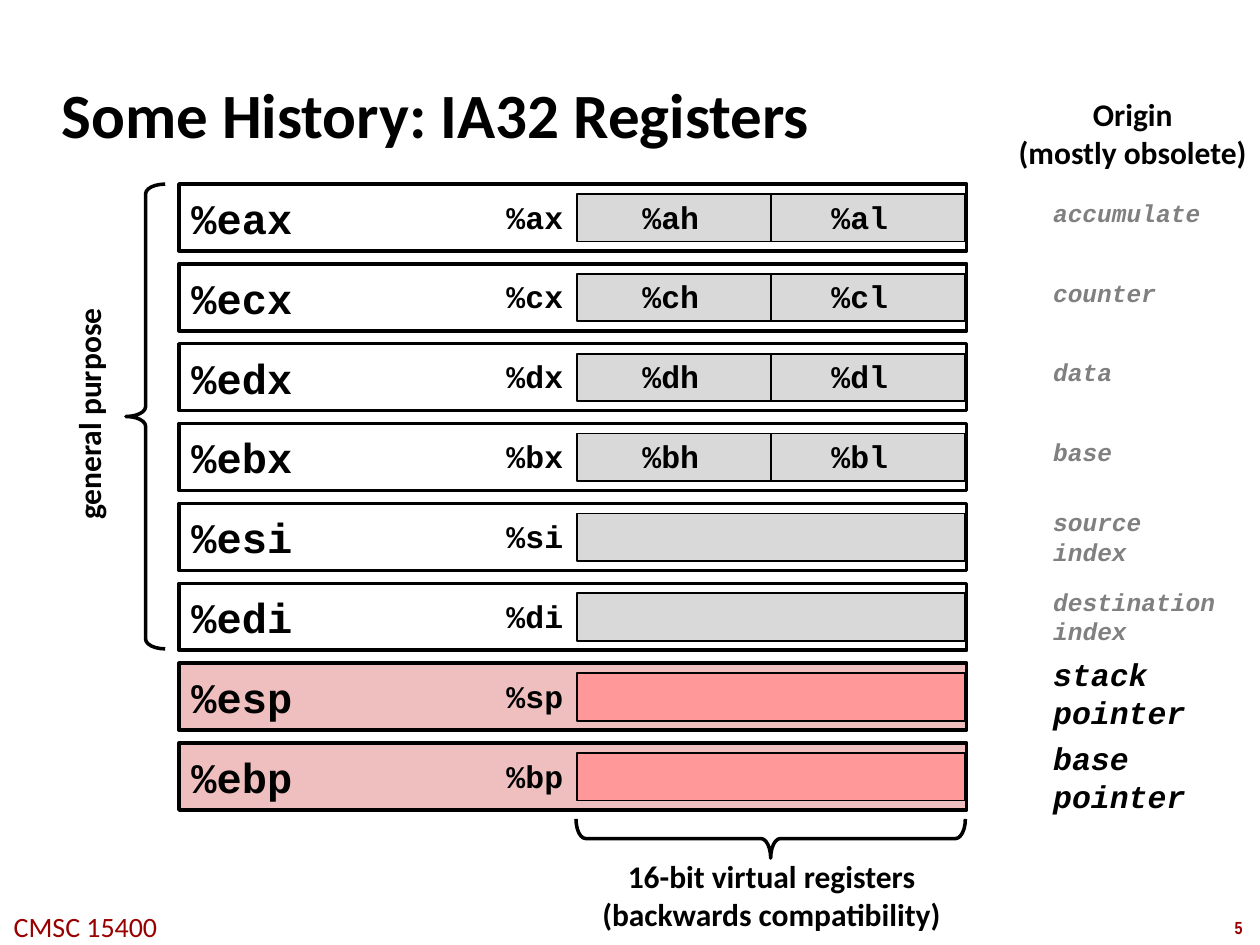
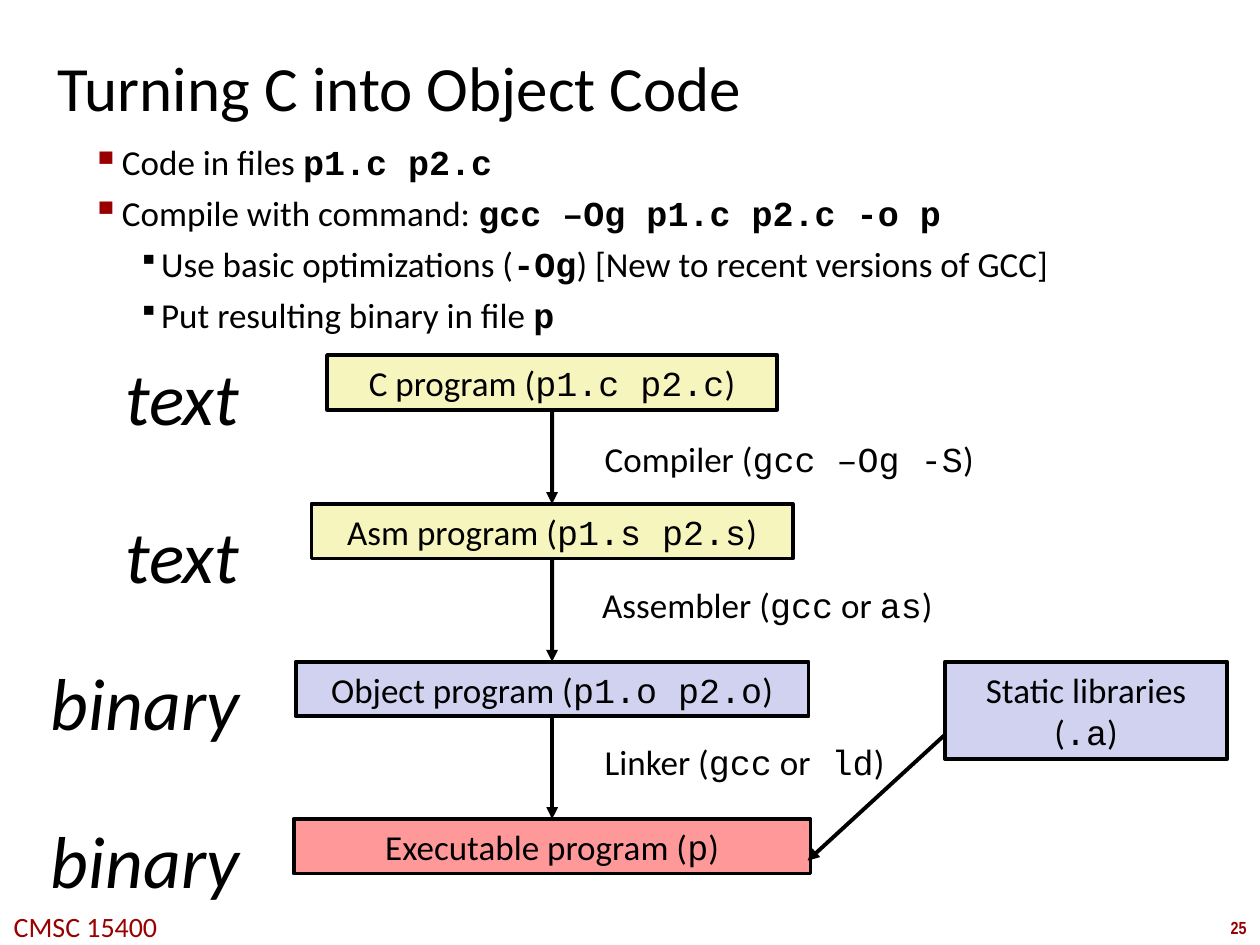
from dataclasses import dataclass, replace
from typing import NamedTuple

from lxml.etree import SubElement
from pptx import Presentation
from pptx.dml.color import RGBColor
from pptx.enum.shapes import MSO_CONNECTOR, MSO_SHAPE
from pptx.enum.text import MSO_ANCHOR, PP_ALIGN
from pptx.oxml.ns import qn
from pptx.util import Cm, Pt

COLORS = {
    "black": "000000", "white": "FFFFFF", "maroon": "990000", "gray": "808080",
    "light gray": "D9D9D9", "pink": "EFBFBF", "red": "FF9999",
    "yellow": "F6F5BD", "lavender": "D1D1F0",
}
MONO = "Courier New"
BOTTOM, TOP = 2, 0


@dataclass(frozen=True)
class TextStyle:
    size: float
    font: str = "Calibri"
    bold: bool = False
    italic: bool = False
    color: str = "black"
    bold_code: bool = False
    align: PP_ALIGN = PP_ALIGN.LEFT


class Box(NamedTuple):
    left: float
    top: float
    width: float
    height: float


class Register(NamedTuple):
    letters: str
    origin: str
    rise: float  # height of the origin label's top above the bar
    split: bool = False
    special: bool = False


class Stage(NamedTuple):
    kind: str
    kind_top: float
    label: str
    top: float
    width: float
    fill: str


class Bullet(NamedTuple):
    text: str
    level: int


class BulletStyle(NamedTuple):
    indent: float
    hanging: float
    color: str
    percent: int


TITLE = TextStyle(36)
LABEL = TextStyle(18, bold=True)
CENTERED_LABEL = replace(LABEL, align=PP_ALIGN.CENTER)
FLOW = TextStyle(20)
FLOW_BOX = replace(FLOW, align=PP_ALIGN.CENTER)
KIND = TextStyle(42, italic=True, align=PP_ALIGN.RIGHT)
REGISTER = TextStyle(24, MONO, bold=True)
PART = TextStyle(18, MONO, bold=True)
OBSOLETE = TextStyle(14, MONO, bold=True, italic=True, color="gray")
CURRENT = replace(PART, italic=True)
FOOTER = TextStyle(16, color="maroon", align=PP_ALIGN.CENTER)
PAGE = TextStyle(10, "Arial Narrow", bold=True, color="maroon", align=PP_ALIGN.CENTER)

# Registers: one row per register, equally spaced
REGISTERS = [
    Register("ax", "accumulate", 0.05, split=True),
    Register("cx", "counter", 0.05, split=True),
    Register("dx", "data", 0.05, split=True),
    Register("bx", "base", 0.05, split=True),
    Register("si", "source\nindex", 0.25),
    Register("di", "destination\nindex", 0.25),
    Register("sp", "stack\npointer", 0.48, special=True),
    Register("bp", "base\npointer", 0.4, special=True),
]
FIRST_ROW = Box(3.61, 3.71, 15.88, 1.35)
FIRST_BAR = Box(11.63, 3.91, 7.82, 0.96)
ROW_PITCH = 1.61
WORD_LEFT, HIGH_LEFT, LOW_LEFT, ORIGIN_LEFT = 9.96, 12.7, 16.51, 20.98

# Compilation: a centred column of boxes
STAGES = [
    Stage("text", 6.98, "C program (`p1.c p2.c`)", 7.16, 9.07, "yellow"),
    Stage("text", 10.16, "Asm program (`p1.s p2.s`)", 10.16, 9.7, "yellow"),
    Stage("binary", 13.13, "Object program (`p1.o p2.o`)", 13.34, 10.34, "lavender"),
    Stage("binary", 16.31, "Executable program (`p`)", 16.51, 10.42, "red"),
]
TOOLS = [
    ("Compiler (`gcc –Og -S`)", Box(11.94, 8.69, 8.43, 1.09)),
    ("Assembler (`gcc` or `as`)", Box(11.89, 11.63, 8.46, 1.09)),
    ("Linker (`gcc` or` ld`)", Box(11.94, 14.81, 7.34, 1.09)),
]
COLUMN_CENTER = 11.13
STAGE_HEIGHT = 1.1
KIND_RIGHT = 5.08
BULLETS = [
    Bullet("Code in files `p1.c p2.c`", 1),
    Bullet("Compile with command: `gcc –Og p1.c p2.c -o p`", 1),
    Bullet("Use basic optimizations (`-Og`) [New to recent versions of GCC]", 2),
    Bullet("Put resulting binary in file `p`", 2),
]
BULLET_STYLES = {
    1: BulletStyle(1.55, 0.61, "maroon", 110),
    2: BulletStyle(2.34, 0.46, "black", 80),
}


def rgb(name: str) -> RGBColor:
    return RGBColor.from_string(COLORS[name])


def write_line(paragraph, line: str, style: TextStyle) -> None:
    """Fill a paragraph; parts between backticks become code."""
    paragraph.alignment = style.align
    for index, part in enumerate(line.split("`")):
        if not part:
            continue
        is_code = index % 2 == 1
        run = paragraph.add_run()
        run.text = part
        formats = {
            "name": MONO if is_code else style.font,
            "size": Pt(style.size),
            "bold": style.bold_code if is_code else style.bold,
            "italic": style.italic,
        }
        for name, value in formats.items():
            setattr(run.font, name, value)
        run.font.color.rgb = rgb(style.color)


def write_text(shape, text: str, style: TextStyle, anchor=MSO_ANCHOR.TOP,
               wrap: bool = True, inset: float | None = None) -> None:
    frame = shape.text_frame
    frame.word_wrap = wrap
    frame.vertical_anchor = anchor
    if inset is not None:
        for side in ("left", "top", "right", "bottom"):
            setattr(frame, f"margin_{side}", Cm(inset))
    for index, line in enumerate(text.split("\n")):
        paragraph = frame.add_paragraph() if index else frame.paragraphs[0]
        write_line(paragraph, line, style)


def add_text(slide, text: str, box: Box, style: TextStyle, **options):
    shape = slide.shapes.add_textbox(*map(Cm, box))
    write_text(shape, text, style, **options)
    return shape


def add_code_label(slide, text: str, left: float, top: float, style: TextStyle) -> None:
    """Fit a text box to fixed-width letters."""
    lines = text.split("\n")
    width = max(map(len, lines)) * style.size * 0.02 * 1.06 + 0.51
    height = len(lines) * style.size * 0.04 + 0.28
    add_text(slide, text, Box(left, top, width, height), style, wrap=False)


def add_box(slide, box: Box, fill: str | None, weight: float, kind=MSO_SHAPE.RECTANGLE):
    shape = slide.shapes.add_shape(kind, *map(Cm, box))
    shape.shadow.inherit = False
    if fill:
        shape.fill.solid()
        shape.fill.fore_color.rgb = rgb(fill)
    else:
        shape.fill.background()
    shape.line.color.rgb = rgb("black")
    shape.line.width = Pt(weight)
    return shape


def add_brace(slide, box: Box, rotation: float) -> None:
    brace = add_box(slide, box, None, 2, MSO_SHAPE.RIGHT_BRACE)
    brace.adjustments[0] = 0.25
    brace.adjustments[1] = 0.5
    brace.rotation = rotation


def add_line(slide, start: tuple, end: tuple, weight: float, arrow: bool = False):
    connector = slide.shapes.add_connector(MSO_CONNECTOR.STRAIGHT, *map(Cm, start + end))
    connector.line.color.rgb = rgb("black")
    connector.line.width = Pt(weight)
    properties = connector._element.spPr
    if arrow:
        SubElement(properties.find(qn("a:ln")), qn("a:tailEnd"), type="triangle")
    SubElement(properties, qn("a:effectLst"))
    return connector


def add_bullets(slide, box: Box) -> None:
    shape = slide.shapes.add_textbox(*map(Cm, box))
    write_text(shape, "", FLOW, inset=0.1)
    frame = shape.text_frame
    for index, bullet in enumerate(BULLETS):
        paragraph = frame.add_paragraph() if index else frame.paragraphs[0]
        look = BULLET_STYLES[bullet.level]
        properties = paragraph._p.get_or_add_pPr()
        properties.set("marL", str(Cm(look.indent)))
        properties.set("indent", str(-Cm(look.hanging)))
        color = SubElement(properties, qn("a:buClr"))
        SubElement(color, qn("a:srgbClr"), val=COLORS[look.color])
        SubElement(properties, qn("a:buSzPct"), val=str(look.percent * 1000))
        SubElement(properties, qn("a:buChar"), char="▪")
        if index:
            paragraph.space_before = Pt(5)
        write_line(paragraph, bullet.text, replace(FLOW, bold_code=True))


def add_slide(presentation, number: int):
    """Start a slide with the shared footer."""
    slide = presentation.slides.add_slide(presentation.slide_layouts[6])
    add_text(slide, str(number), Box(24.54, 18.36, 0.86, 0.69), PAGE, wrap=False)
    add_text(slide, "CMSC 15400", Box(-0.08, 18.21, 3.61, 0.94), FOOTER, wrap=False)
    return slide


def add_register(slide, register: Register, row: int) -> None:
    shift = row * ROW_PITCH
    outer = FIRST_ROW._replace(top=FIRST_ROW.top + shift)
    bar = FIRST_BAR._replace(top=FIRST_BAR.top + shift)
    shape = add_box(slide, outer, "pink" if register.special else "white", 2)
    write_text(shape, f"%e{register.letters}", REGISTER, anchor=MSO_ANCHOR.MIDDLE)
    add_box(slide, bar, "red" if register.special else "light gray", 1)
    parts = [(register.letters, WORD_LEFT)]
    if register.split:
        middle = bar.left + bar.width / 2
        add_line(slide, (middle, bar.top), (middle, bar.top + bar.height), 1)
        parts += [(register.letters[0] + "h", HIGH_LEFT), (register.letters[0] + "l", LOW_LEFT)]
    for letters, left in parts:
        add_code_label(slide, f"%{letters}", left, bar.top - 0.05, PART)
    add_code_label(slide, register.origin, ORIGIN_LEFT, bar.top - register.rise,
                   CURRENT if register.special else OBSOLETE)


def build_registers(presentation) -> None:
    slide = add_slide(presentation, 5)
    add_text(slide, "Some History: IA32 Registers", Box(0.99, 1.22, 21.08, 2.11),
             replace(TITLE, bold=True), anchor=MSO_ANCHOR.MIDDLE)
    for row, register in enumerate(REGISTERS):
        add_register(slide, register, row)
    # Braces and their labels
    add_brace(slide, Box(15.14, 12.98, 0.79, 7.85), 90)
    add_text(slide, "16-bit virtual registers\n(backwards compatibility)",
             Box(11.86, 17.15, 7.39, 1.8), CENTERED_LABEL, wrap=False)
    add_brace(slide, Box(2.54, 3.71, 0.79, 9.37), 180)
    purpose = add_text(slide, "general purpose", Box(-0.61, 7.82, 4.8, 1.02), LABEL, wrap=False)
    purpose.rotation = 270
    add_text(slide, "Origin\n(mostly obsolete)", Box(20.27, 1.8, 5.13, 1.8),
             CENTERED_LABEL, wrap=False)


def build_compilation(presentation) -> None:
    slide = add_slide(presentation, 25)
    add_text(slide, "Turning C into Object Code", Box(1.07, 0.94, 19.43, 1.6), TITLE,
             anchor=MSO_ANCHOR.MIDDLE, inset=0.1)
    add_bullets(slide, Box(0.81, 2.74, 23.09, 4.06))
    # Stages joined from top to bottom
    previous = None
    for stage in STAGES:
        kind_width = 4.01 if stage.kind == "text" else 5.54
        add_text(slide, stage.kind,
                 Box(KIND_RIGHT - kind_width, stage.kind_top, kind_width, 2.06), KIND)
        left = COLUMN_CENTER - stage.width / 2
        shape = add_box(slide, Box(left, stage.top, stage.width, STAGE_HEIGHT), stage.fill, 2.25)
        write_text(shape, stage.label, FLOW_BOX, anchor=MSO_ANCHOR.MIDDLE)
        if previous is not None:
            arrow = add_line(slide, (COLUMN_CENTER, 0), (COLUMN_CENTER, stage.top), 2.25, arrow=True)
            arrow.begin_connect(previous, BOTTOM)
            arrow.end_connect(shape, TOP)
        previous = shape
    for label, box in TOOLS:
        add_text(slide, label, box, FLOW)
    # Libraries feeding the linker
    libraries = add_box(slide, Box(19.05, 13.34, 5.69, 1.96), "lavender", 2.25)
    write_text(libraries, "Static libraries (`.a`)", FLOW_BOX, anchor=MSO_ANCHOR.MIDDLE)
    add_line(slide, (19.05, 14.81), (16.28, 17.35), 2.25, arrow=True)


def main() -> None:
    presentation = Presentation()
    presentation.slide_width = Cm(25.4)
    presentation.slide_height = Cm(19.05)
    build_registers(presentation)
    build_compilation(presentation)
    presentation.save("out.pptx")


if __name__ == "__main__":
    main()
